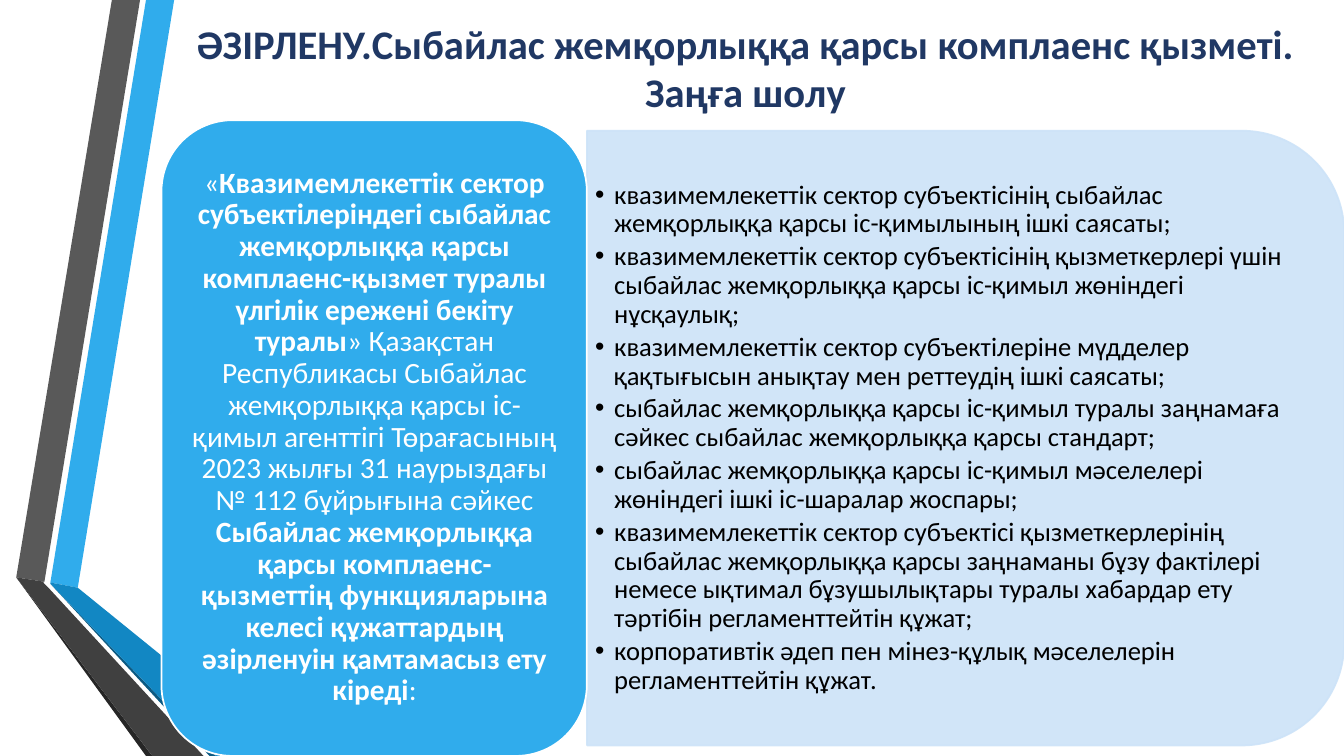
import pptx
import pptx.dml.color
import pptx.enum.shapes
import pptx.enum.text
import pptx.oxml.ns
import pptx.util
from lxml import etree

Cm = pptx.util.Cm
Pt = pptx.util.Pt
RGBColor = pptx.dml.color.RGBColor
Shapes = pptx.enum.shapes.MSO_SHAPE
Align = pptx.enum.text.PP_ALIGN
qn = pptx.oxml.ns.qn

WHITE = RGBColor(0xFF, 0xFF, 0xFF)
BLACK = RGBColor(0x00, 0x00, 0x00)
NAVY = RGBColor(0x20, 0x38, 0x64)
SKY = RGBColor(0x30, 0xAC, 0xEC)
BLUE = RGBColor(0x12, 0x87, 0xC3)
DEEP_BLUE = RGBColor(0x0C, 0x5A, 0x82)
PALE_BLUE = RGBColor(0xCD, 0xE3, 0xF8)
GRAY = RGBColor(0x59, 0x59, 0x59)
DARK_GRAY = RGBColor(0x40, 0x40, 0x40)
CHARCOAL = RGBColor(0x26, 0x26, 0x26)

RIBBONS = [
    (SKY, [(1.27, 14.68), (1.96, 14.81), (4.39, 0), (3.68, 0)]),
    (GRAY, [(3.53, 0), (2.82, 0), (0.41, 14.55), (1.12, 14.66)]),
    (CHARCOAL, [(0.41, 14.55), (3.68, 19.05), (3.84, 19.05)]),
    (DEEP_BLUE, [(1.27, 14.71), (5.28, 19.05), (5.44, 19.05)]),
    (BLUE, [(1.27, 14.68), (1.27, 14.71), (5.44, 19.05), (7.19, 19.05), (1.96, 14.81)]),
    (DARK_GRAY, [(5.13, 19.05), (1.22, 14.81), (1.09, 14.68), (1.12, 14.66),
                 (0.41, 14.55), (3.84, 19.05)]),
]

TITLE = "ӘЗІРЛЕНУ.Сыбайлас жемқорлыққа қарсы комплаенс қызметі. Заңға шолу"

ORDER_RUNS = [
    ("«", False),
    ("Квазимемлекеттік сектор субъектілеріндегі сыбайлас жемқорлыққа қарсы "
     "комплаенс-қызмет туралы үлгілік ережені бекіту туралы", True),
    ("» Қазақстан Республикасы Сыбайлас жемқорлыққа қарсы іс-қимыл агенттігі "
     "Төрағасының 2023 жылғы 31 наурыздағы № 112 бұйрығына сәйкес ", False),
    ("Сыбайлас жемқорлыққа қарсы комплаенс-қызметтің функцияларына келесі "
     "құжаттардың әзірленуін қамтамасыз ету кіреді", True),
    (":", False),
]

DOCUMENTS = [
    "квазимемлекеттік сектор субъектісінің сыбайлас жемқорлыққа қарсы "
    "іс-қимылының ішкі саясаты;",
    "квазимемлекеттік сектор субъектісінің қызметкерлері үшін сыбайлас "
    "жемқорлыққа қарсы іс-қимыл жөніндегі нұсқаулық;",
    "квазимемлекеттік сектор субъектілеріне мүдделер қақтығысын анықтау мен "
    "реттеудің ішкі саясаты;",
    "сыбайлас жемқорлыққа қарсы іс-қимыл туралы заңнамаға сәйкес сыбайлас "
    "жемқорлыққа қарсы стандарт;",
    "сыбайлас жемқорлыққа қарсы іс-қимыл мәселелері жөніндегі ішкі "
    "іс-шаралар жоспары;",
    "квазимемлекеттік сектор субъектісі қызметкерлерінің сыбайлас "
    "жемқорлыққа қарсы заңнаманы бұзу фактілері немесе ықтимал "
    "бұзушылықтары туралы хабардар ету тәртібін регламенттейтін құжат;",
    "корпоративтік әдеп пен мінез-құлық мәселелерін регламенттейтін құжат.",
]


def add_run(paragraph, text, *, size, color, bold=False, font="Calibri"):
    run = paragraph.add_run()
    run.text = text
    run.font.name = font
    run.font.size = Pt(size)
    run.font.bold = bold
    run.font.color.rgb = color


class SlideBuilder:
    def __init__(self, slide, line_width=1.25, bullet_indent=0.48):
        self.slide = slide
        self.line_width = line_width
        self.bullet_indent = bullet_indent

    def ribbon(self, color, points):
        corners = [(Cm(x), Cm(y)) for x, y in points]
        builder = self.slide.shapes.build_freeform(*corners[0])
        builder.add_line_segments(corners[1:], close=True)
        shape = builder.convert_to_shape()
        shape.shadow.inherit = False
        shape.fill.solid()
        shape.fill.fore_color.rgb = color
        shape.line.fill.background()

    def panel(self, kind, box, fill, line, rotation=0, opacity=100):
        shape = self.slide.shapes.add_shape(kind, *map(Cm, box))
        shape.shadow.inherit = False
        shape.rotation = rotation
        shape.fill.solid()
        shape.fill.fore_color.rgb = fill
        shape.line.color.rgb = line
        shape.line.width = Pt(self.line_width)
        if opacity < 100:
            for color in shape.element.spPr.iter(qn("a:srgbClr")):
                etree.SubElement(color, qn("a:alpha"), val=str(opacity * 1000))

    def text(self, box, paragraphs, *, size, color, spacing, align=Align.LEFT,
             space_after=0, bullet=None, insets=(0.2, 0.1)):
        frame = self.slide.shapes.add_textbox(*map(Cm, box)).text_frame
        frame.word_wrap = True
        frame.vertical_anchor = pptx.enum.text.MSO_ANCHOR.MIDDLE
        frame.margin_left = frame.margin_right = Cm(insets[0])
        frame.margin_top = frame.margin_bottom = Cm(insets[1])
        for index, runs in enumerate(paragraphs):
            paragraph = frame.add_paragraph() if index else frame.paragraphs[0]
            paragraph.alignment = align
            paragraph.line_spacing = spacing
            paragraph.space_after = Pt(space_after)
            if bullet:
                self.bullet(paragraph, bullet)
            for text, bold in runs:
                add_run(paragraph, text, size=size, color=color, bold=bold)

    def bullet(self, paragraph, character):
        properties = paragraph._p.get_or_add_pPr()
        indent = Cm(self.bullet_indent)
        properties.set("marL", str(indent))
        properties.set("indent", str(-indent))
        etree.SubElement(properties, qn("a:buFont"), typeface="Arial")
        etree.SubElement(properties, qn("a:buChar"), char=character)


def main():
    presentation = pptx.Presentation()
    presentation.slide_width = Cm(33.87)
    presentation.slide_height = Cm(19.05)
    builder = SlideBuilder(presentation.slides.add_slide(presentation.slide_layouts[6]))

    for color, points in RIBBONS:
        builder.ribbon(color, points)

    builder.text((3.73, 0.25, 30.12, 3), [[(TITLE, True)]], size=29, color=NAVY,
                 spacing=0.97, align=Align.CENTER, insets=(0.25, 0.13))

    builder.panel(Shapes.ROUND_2_SAME_RECTANGLE, (16.59, 1.5, 15.49, 19.08),
                  PALE_BLUE, PALE_BLUE, rotation=90, opacity=90)
    builder.text((14.8, 4.04, 18.31, 14), [[(document, False)] for document in DOCUMENTS],
                 size=19, color=BLACK, spacing=0.9, space_after=3, bullet="•")

    builder.panel(Shapes.ROUNDED_RECTANGLE, (4.07, 3.03, 10.72, 16.02), SKY, WHITE)
    builder.text((4.6, 3.53, 9.68, 14.99), [ORDER_RUNS], size=21, color=WHITE,
                 spacing=0.9, align=Align.CENTER, insets=(0.23, 0.1))

    presentation.save("out.pptx")


if __name__ == "__main__":
    main()
